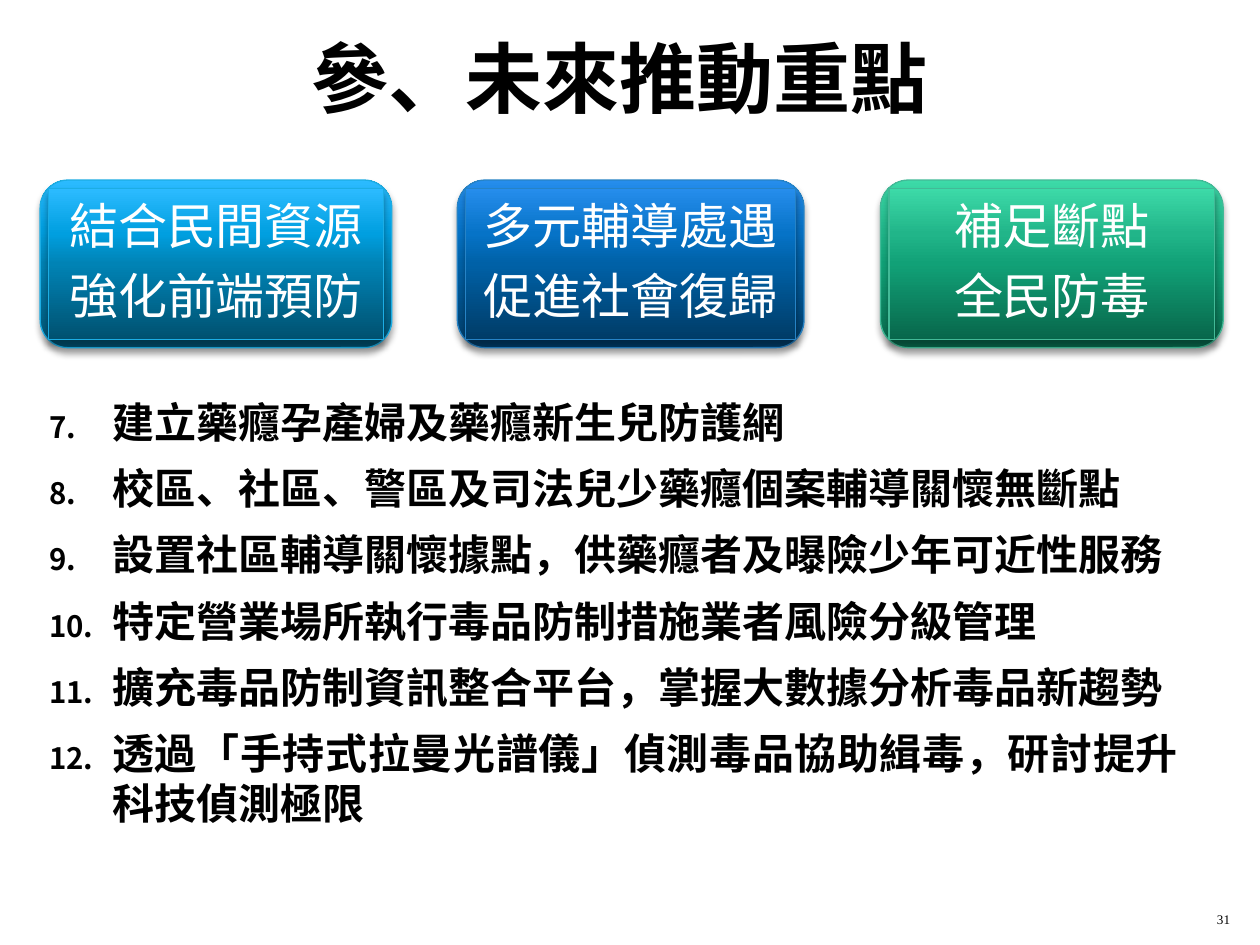
from lxml.etree import SubElement
from pptx import Presentation
from pptx.dml.color import RGBColor
from pptx.enum.shapes import MSO_SHAPE as Preset
from pptx.enum.text import MSO_ANCHOR as Anchor, MSO_AUTO_SIZE as AutoSize, PP_ALIGN as Align
from pptx.oxml.ns import qn
from pptx.util import Cm, Pt

FONT = "Times New Roman"
CARD_TOP, CARD_HEIGHT = 3.63, 3.38
CARD_INSET = 0.17
CARDS = [
    (17.75, 6.91, ["補足斷點", "全民防毒"], "42BA97",
     ["08674B", "11A177", "21B589", "3DDAA8"]),
    (9.22, 6.99, ["多元輔導處遇", "促進社會復歸"], "2683C6",
     ["003C67", "0061A7", "0673C7", "268DEC"]),
    (0.81, 7.09, ["結合民間資源", "強化前端預防"], "1CADE4",
     ["005170", "0083B5", "009FE0", "2CBBFF"]),
]
GRADIENT_STOPS = [0, 50, 70, 100]
FIRST_NUMBER = 7
MEASURES = [
    "建立藥癮孕產婦及藥癮新生兒防護網",
    "校區、社區、警區及司法兒少藥癮個案輔導關懷無斷點",
    "設置社區輔導關懷據點，供藥癮者及曝險少年可近性服務",
    "特定營業場所執行毒品防制措施業者風險分級管理",
    "擴充毒品防制資訊整合平台，掌握大數據分析毒品新趨勢",
    "透過「手持式拉曼光譜儀」偵測毒品協助緝毒，研討提升科技偵測極限",
]


def color(code):
    return RGBColor.from_string(code)


def add_node(parent, tag, **attributes):
    return SubElement(parent, qn(tag), {key: str(value) for key, value in attributes.items()})


def write(para, text, size, code="000000", bold=False, align=Align.CENTER):
    para.alignment = align
    span = para.add_run()
    span.text = text
    span.font.name = FONT
    span.font.size = Pt(size)
    span.font.bold = bold
    span.font.color.rgb = color(code)


def paragraphs(frame, count):
    return [frame.paragraphs[0]] + [frame.add_paragraph() for _ in range(count - 1)]


def add_gradient(shape, codes):
    shape.fill.gradient()
    gradient = shape._element.spPr.find(qn("a:gradFill"))
    for child in list(gradient):
        gradient.remove(child)
    stops = add_node(gradient, "a:gsLst")
    for position, code in zip(GRADIENT_STOPS, codes):
        stop = add_node(stops, "a:gs", pos=position * 1000)
        add_node(stop, "a:srgbClr", val=code)
    add_node(gradient, "a:lin", ang=270 * 60000, scaled=0)


def add_shadow(shape):
    shape.shadow.inherit = False
    effects = shape._element.spPr.find(qn("a:effectLst"))
    shadow = add_node(effects, "a:outerShdw", blurRad=Pt(4), dist=Pt(3),
                      dir=90 * 60000, algn="ctr", rotWithShape=0)
    add_node(add_node(shadow, "a:srgbClr", val="000000"), "a:alpha", val=35000)


def add_panel(group, preset, left, top, width, height, codes, border):
    panel = group.shapes.add_shape(preset, Cm(left), Cm(top), Cm(width), Cm(height))
    add_gradient(panel, codes)
    panel.line.color.rgb = color(border)
    panel.line.width = Pt(0.75)
    add_shadow(panel)
    return panel


def add_card(page, left, width, lines, border, codes):
    group = page.shapes.add_group_shape()
    add_panel(group, Preset.ROUNDED_RECTANGLE, left, CARD_TOP, width, CARD_HEIGHT, codes, border)
    label = add_panel(group, Preset.RECTANGLE, left + CARD_INSET, CARD_TOP + CARD_INSET,
                      width - 2 * CARD_INSET, CARD_HEIGHT - 2 * CARD_INSET, codes, border)
    frame = label.text_frame
    frame.word_wrap = True
    frame.vertical_anchor = Anchor.MIDDLE
    frame.margin_left = frame.margin_right = Cm(0.33)
    frame.margin_top = frame.margin_bottom = Cm(0.33)
    for para, text in zip(paragraphs(frame, len(lines)), lines):
        para.line_spacing = 0.9
        after = add_node(para._p.get_or_add_pPr(), "a:spcAft")
        add_node(after, "a:spcPct", val=35000)
        write(para, text, 28, "FFFFFF")


def add_text_box(page, left, top, width, height):
    box = page.shapes.add_textbox(Cm(left), Cm(top), Cm(width), Cm(height))
    box.text_frame.word_wrap = True
    return box.text_frame


def add_measures(page):
    frame = add_text_box(page, -0.2, 7.87, 24.2, 9.04)
    frame.auto_size = AutoSize.SHAPE_TO_FIT_TEXT
    for index, (para, text) in enumerate(zip(paragraphs(frame, len(MEASURES)), MEASURES)):
        para.level = 1
        para.space_before = Pt(9 if index else 0)
        properties = para._p.get_or_add_pPr()
        properties.set("marL", str(Cm(2.21)))
        properties.set("indent", str(Cm(-1.27)))
        add_node(properties, "a:buSzPct", val=70000)
        add_node(properties, "a:buFont", typeface="+mj-ea")
        add_node(properties, "a:buAutoNum", type="arabicPeriod", startAt=FIRST_NUMBER)
        write(para, text, 24, bold=True, align=Align.JUSTIFY)


def add_title(page, text):
    title = page.shapes.title
    title.left, title.top = Cm(1.07), Cm(0.36)
    title.width, title.height = Cm(22.86), Cm(2.39)
    title.text_frame.vertical_anchor = Anchor.MIDDLE
    write(title.text_frame.paragraphs[0], text, 44, bold=True)


def add_page_number(page, text):
    frame = add_text_box(page, 24.03, 17.8, 1.02, 1.02)
    frame.vertical_anchor = Anchor.BOTTOM
    write(frame.paragraphs[0], text, 7.5, align=Align.RIGHT)


def main():
    deck = Presentation()
    deck.slide_width, deck.slide_height = Cm(25.4), Cm(19.05)
    page = deck.slides.add_slide(deck.slide_layouts[5])
    add_title(page, "參、未來推動重點")
    add_measures(page)
    add_page_number(page, "31")
    for card in CARDS:
        add_card(page, *card)
    deck.save("out.pptx")


if __name__ == "__main__":
    main()
